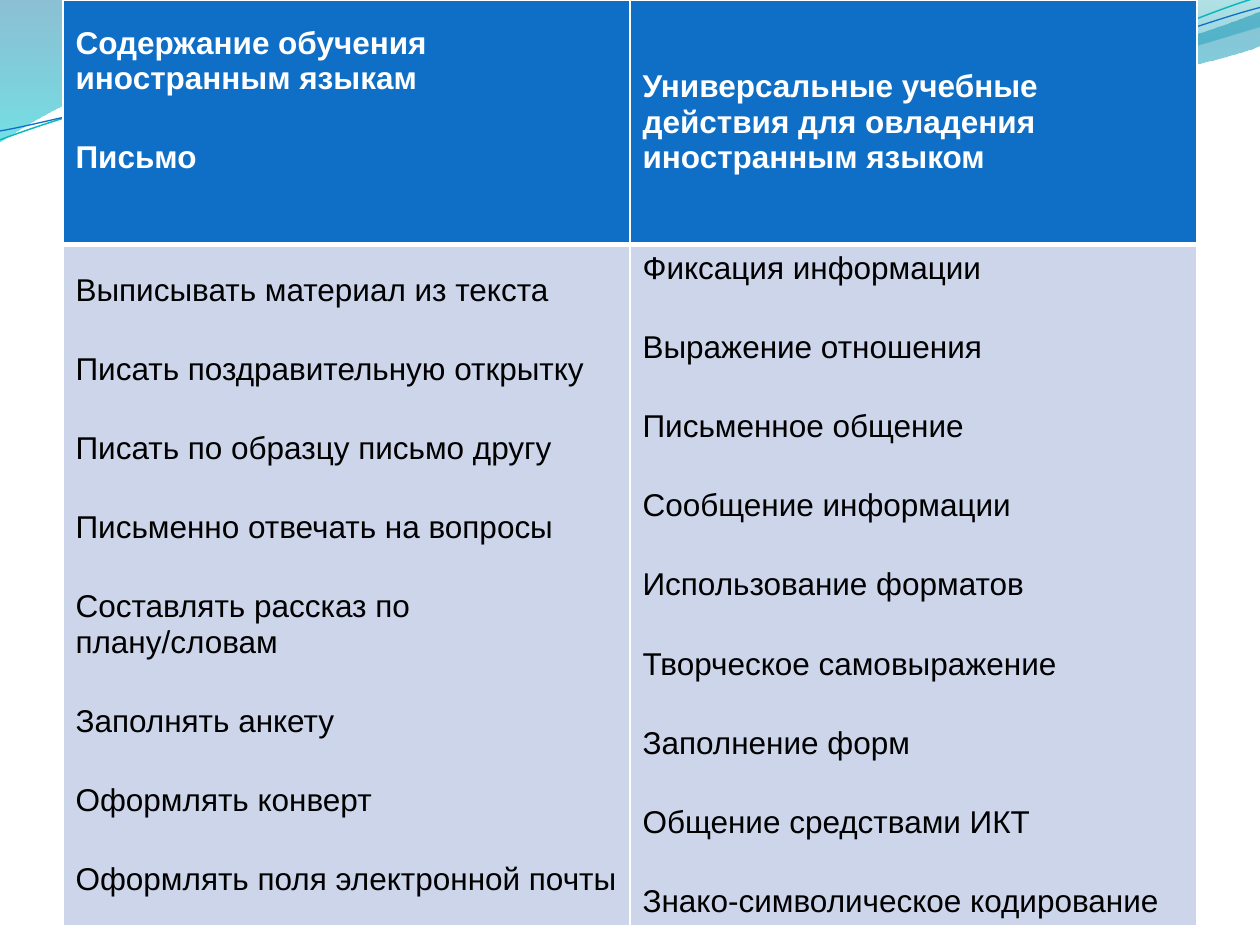
from math import cos, radians, sin

from lxml import etree
from pptx import Presentation
from pptx.dml.color import RGBColor
from pptx.enum.text import MSO_ANCHOR
from pptx.oxml.ns import qn
from pptx.util import Cm, Pt

MIDDLE = MSO_ANCHOR.MIDDLE

WHITE = RGBColor(0xFF, 0xFF, 0xFF)
BLACK = RGBColor(0x00, 0x00, 0x00)
BLUE = RGBColor(0x0F, 0x6F, 0xC6)
TEAL = RGBColor(0x0A, 0xB8, 0xBF)
PALE = RGBColor(0xCC, 0xD5, 0xEA)
DEEP_BLUE = RGBColor(0x00, 0x74, 0xA1)
CYAN = RGBColor(0x00, 0xC6, 0xCF)
DARK_TEAL = RGBColor(0x00, 0xA1, 0xA9)
SKY = RGBColor(0x00, 0x8B, 0xBF)

STROKE_TILT = -2.7

# Wave outlines in inches: a start point, then lines (2 numbers) or Bézier curves (6).
# Gradient stops: position, colour, opacity in percent.
BANDS = [
    ((0, -0.01),
     [(4.4, -0.01), (4.76, 0.17, 6.64, 0.63, 7.58, 0.63),
      (8.53, 0.63, 9.58, 0.26, 10, 0.09), (10.01, 0.36),
      (9.83, 0.44, 8.7, 0.76, 7.46, 0.75), (6.22, 0.75, 3.82, 0.28, 2.57, 0.34),
      (1.29, 0.35, 0.46, 0.83, -0.01, 1.13), (0, -0.01)],
     [(0, DEEP_BLUE, 45), (1, CYAN, 55)]),
    ((4.79, -0.01),
     [(5.09, 0.11, 6.82, 0.62, 7.69, 0.65), (8.56, 0.69, 9.61, 0.32, 10, 0.21),
      (10, 0), (4.79, -0.01)],
     [(0, DARK_TEAL, 30), (0.8, SKY, 45)]),
]
# Each stroke also has the centre it is tilted around, its colour and its width.
STROKES = [
    ((0, 1.11),
     [(0.48, 0.93, 1.58, 0.57, 2.77, 0.52), (3.95, 0.47, 5.93, 0.89, 7.13, 0.8),
      (8.33, 0.71, 9.38, 0.15, 9.98, -0.02)],
     (4.99, 0.58), TEAL, 0.85),
    ((0, 1.04),
     [(0.47, 0.96, 1.64, 0.61, 2.83, 0.56), (4.03, 0.51, 5.97, 0.83, 7.17, 0.75),
      (8.36, 0.67, 9.41, 0.21, 10, 0.06)],
     (5, 0.59), BLUE, 0.75),
]

HEADERS = [
    ["Содержание обучения иностранным языкам", "Письмо"],
    ["Универсальные учебные действия для овладения иностранным языком"],
]
SKILLS = [
    ["Выписывать материал из текста", "Писать поздравительную открытку",
     "Писать по образцу письмо другу", "Письменно отвечать на вопросы",
     "Составлять рассказ по плану/словам", "Заполнять анкету",
     "Оформлять конверт", "Оформлять поля электронной почты"],
    ["Фиксация информации", "Выражение отношения", "Письменное общение",
     "Сообщение информации", "Использование форматов", "Творческое самовыражение",
     "Заполнение форм", "Общение средствами ИКТ", "Знако-символическое кодирование"],
]


def inches_to_emu(point):
    return tuple(Cm(value * 2.54) for value in point)


def pairs(numbers):
    return list(zip(numbers[::2], numbers[1::2]))


def turn(numbers, center, degrees):
    """Rotate a flat run of x, y numbers clockwise around center."""
    c, s = cos(radians(degrees)), sin(radians(degrees))
    turned = []
    for x, y in pairs(numbers):
        dx, dy = x - center[0], y - center[1]
        turned += [center[0] + dx * c - dy * s, center[1] + dx * s + dy * c]
    return tuple(turned)


class SlideBuilder:
    font = "Arial"
    size = Pt(18)
    gap = Pt(25.07)

    def __init__(self, slide):
        self.slide = slide

    def outline(self, start, segments, close):
        """Draw lines through all points, then join each curve's three lines."""
        builder = self.slide.shapes.build_freeform(*inches_to_emu(start))
        points = [inches_to_emu(p) for segment in segments for p in pairs(segment)]
        builder.add_line_segments(points, close=close)
        shape = builder.convert_to_shape()
        shape.shadow.inherit = False
        lines = shape.element.spPr.iter(qn("a:lnTo"))
        lines = iter(list(lines))
        for segment in segments:
            parts = [next(lines) for _ in pairs(segment)]
            if len(parts) == 3:
                curve = etree.Element(qn("a:cubicBezTo"))
                parts[0].addprevious(curve)
                for part in parts:
                    curve.append(part[0])
                    part.getparent().remove(part)
        return shape

    def band(self, start, segments, stops):
        shape = self.outline(start, segments, True)
        shape.line.fill.background()
        shape.fill.gradient()
        shape.fill.gradient_angle = 270
        for stop, (position, color, _) in zip(shape.fill.gradient_stops, stops):
            stop.position = position
            stop.color.rgb = color
        colors = shape.element.spPr.find(qn("a:gradFill")).iter(qn("a:srgbClr"))
        for node, (_, _, opacity) in zip(colors, stops):
            etree.SubElement(node, qn("a:alpha"), val=str(opacity * 1000))

    def stroke(self, start, segments, center, color, width):
        level = [turn(part, center, -STROKE_TILT) for part in [start, *segments]]
        shape = self.outline(level[0], level[1:], False)
        shape.rotation = STROKE_TILT
        shape.fill.background()
        shape.line.color.rgb = color
        shape.line.width = Pt(width)

    def table(self, left, top, column_width, row_heights):
        table = self.slide.shapes.add_table(len(row_heights), 2, left, top,
                                            column_width * 2, sum(row_heights)).table
        for column in table.columns:
            column.width = column_width
        for row, height in zip(table.rows, row_heights):
            row.height = height
        return table

    def cell(self, cell, lines, fill, color, bold, borders):
        """Fill one cell; borders maps a side (L, R, T, B) to points."""
        cell.vertical_anchor = MIDDLE
        frame = cell.text_frame
        frame.text = "\n".join(lines)
        for index, para in enumerate(frame.paragraphs):
            para.font.name = self.font
            para.font.size = self.size
            para.font.bold = bold
            para.font.color.rgb = color
            if index:
                para.space_before = self.gap
        properties = cell._tc.get_or_add_tcPr()
        for side, width in borders.items():
            line = etree.SubElement(properties, qn(f"a:ln{side}"), w=str(Pt(width)))
            solid = etree.SubElement(line, qn("a:solidFill"))
            etree.SubElement(solid, qn("a:srgbClr"), val=str(WHITE))
        cell.fill.solid()
        cell.fill.fore_color.rgb = fill


def main():
    deck = Presentation()
    deck.slide_width, deck.slide_height = Cm(25.4), Cm(19.05)
    page = SlideBuilder(deck.slides.add_slide(deck.slide_layouts[6]))

    for band in BANDS:
        page.band(*band)
    for stroke in STROKES:
        page.stroke(*stroke)

    table = page.table(Cm(1.27), Cm(0), Cm(11.43), [Cm(4.93), Cm(13.13)])
    for column, (header, skills) in enumerate(zip(HEADERS, SKILLS)):
        page.cell(table.cell(0, column), header, BLUE, WHITE, True,
                  {"L": 1, "R": 1, "T": 1, "B": 3})
        page.cell(table.cell(1, column), skills, PALE, BLACK, False,
                  {"L": 1, "R": 1, "B": 1})
    table.cell(0, 0).margin_bottom = Cm(1)

    deck.save("out.pptx")


if __name__ == "__main__":
    main()
